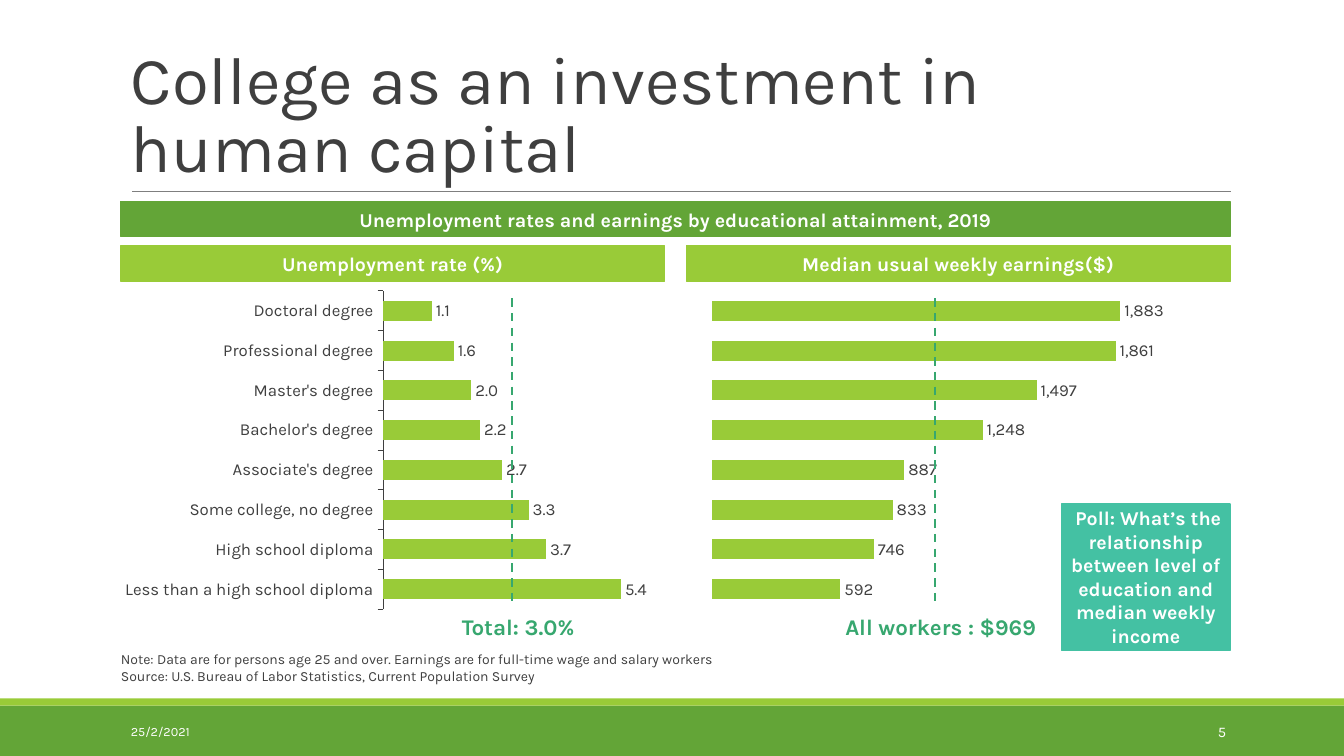
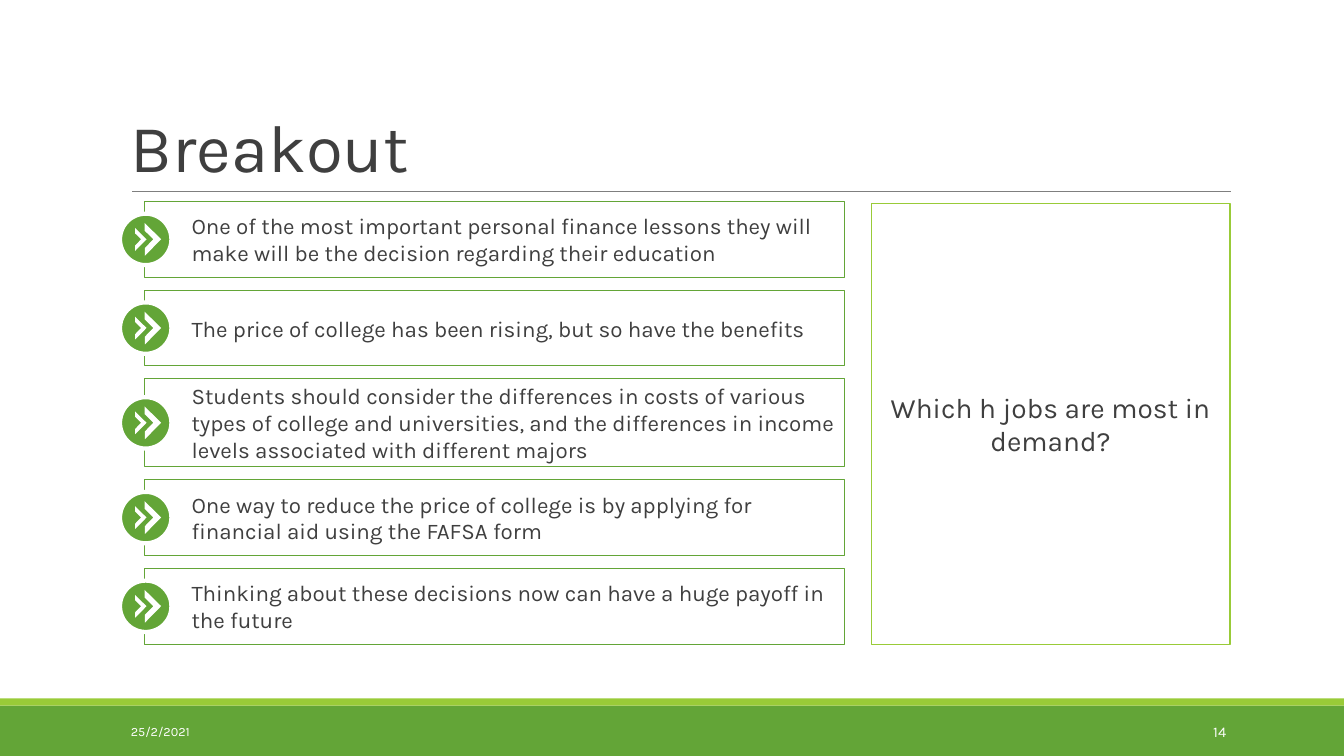
from dataclasses import dataclass

from lxml import etree
from pptx import Presentation
from pptx import util as u
from pptx.chart import data as chart_data
from pptx.dml import color
from pptx.enum import chart as charts
from pptx.enum import dml, shapes, text
from pptx.oxml import ns, parse_xml


@dataclass(frozen=True)
class Theme:
    font: str = "Karla"
    ink: str = "3F3F3F"
    rule: str = "7F7F7F"
    white: str = "FFFFFF"
    green: str = "63A537"
    lime: str = "99CB38"
    jade: str = "37A76F"
    teal: str = "44C1A3"
    title: float = 48
    question: float = 20
    body: float = 16
    heading: float = 14
    label: float = 12
    note: float = 10
    date: float = 9
    number: float = 10.5
    hairline: float = 0.75
    dash: float = 1.5
    ring: float = 3


THEME = Theme()
ALIGN = text.PP_ALIGN
ANCHOR = text.MSO_ANCHOR
KIND = shapes.MSO_SHAPE
PADDING = (0.1, 0.05, 0.1, 0.05)
FLUSH = (0, 0, 0, 0)
LEFT, WIDTH = 1.2, 11

DATE = "25/2/2021"
EARNINGS_TITLE = ["College as an investment in ", "human capital"]
EARNINGS_BANNER = "Unemployment rates and earnings by educational attainment, 2019"
DEGREES = [
    "Less than a high school diploma", "High school diploma",
    "Some college, no degree", "Associate's degree", "Bachelor's degree",
    "Master's degree", "Professional degree", "Doctoral degree",
]
PANELS = [
    {
        "heading": "Unemployment rate (%)", "average": "Total: 3.0%",
        "categories": DEGREES, "values": [5.4, 3.7, 3.3, 2.7, 2.2, 2, 1.6, 1.1],
        "format": "#,##0.0", "maximum": 6, "show_axis": True,
        "plot": (0.483, 0.005, 0.486, 0.954), "average_x": 5.08,
    },
    {
        "heading": "Median usual weekly earnings($)", "average": "All workers : $969",
        "categories": [str(n) for n in range(1, 9)],
        "values": [592, 746, 833, 887, 1248, 1497, 1861, 1883],
        "format": "#,##0", "maximum": 2000, "show_axis": False,
        "plot": (0.047, 0.005, 0.798, 0.954), "average_x": 9.27,
    },
]
NOTES = [
    "Note: Data are for persons age 25 and over. Earnings are for full-time wage and salary workers",
    "Source: U.S. Bureau of Labor Statistics, Current Population Survey",
]
POLL = " Poll: What’s the relationship between level of education and median weekly income"

BREAKOUT_TITLE = ["Breakout"]
LESSONS = [
    ("One of the most important personal finance lessons they will make "
     "will be the decision regarding their education", 0.75),
    ("The price of college has been rising, but so have the benefits", 0.75),
    ("Students should consider the differences in costs of various types of "
     "college and universities, and the differences in income levels "
     "associated with different majors", 0.87),
    ("One way to reduce the price of college is by applying for financial aid "
     "using the FAFSA form", 0.75),
    ("Thinking about these decisions now can have a huge payoff in the future", 0.75),
]
QUESTION = "Which h jobs are most in demand?"


def rgb(value):
    return color.RGBColor.from_string(value)


def style_font(font, size, ink, bold=False):
    font.name = THEME.font
    font.size = u.Pt(size)
    font.color.rgb = rgb(ink)
    font.bold = bold


def write(box, paragraphs, size, ink=THEME.ink, bold=False, align=ALIGN.LEFT,
          anchor=ANCHOR.MIDDLE, padding=PADDING):
    frame = box.text_frame
    frame.word_wrap = True
    frame.vertical_anchor = anchor
    (frame.margin_left, frame.margin_top,
     frame.margin_right, frame.margin_bottom) = map(u.Inches, padding)
    for index, content in enumerate(paragraphs):
        para = frame.add_paragraph() if index else frame.paragraphs[0]
        para.alignment = align
        lines = [content] if isinstance(content, str) else content
        for number, line in enumerate(lines):
            if number:
                para.add_line_break()
            span = para.add_run()
            span.text = line
            style_font(span.font, size, ink, bold)
    return frame


def add_text(page, place, paragraphs, size, **style):
    box = page.shapes.add_textbox(*map(u.Inches, place))
    return write(box, paragraphs, size, **style)


def add_box(parent, place, fill=None, line=None, weight=THEME.hairline, kind=KIND.RECTANGLE):
    box = parent.shapes.add_shape(kind, *map(u.Inches, place))
    box.shadow.inherit = False
    if fill:
        box.fill.solid()
        box.fill.fore_color.rgb = rgb(fill)
    else:
        box.fill.background()
    if line:
        box.line.color.rgb = rgb(line)
        box.line.width = u.Pt(weight)
    else:
        box.line.fill.background()
    return box


def add_line(page, start, end, ink, weight, dash=None):
    line = page.shapes.add_connector(
        shapes.MSO_CONNECTOR.STRAIGHT, *map(u.Inches, start + end))
    line.line.color.rgb = rgb(ink)
    line.line.width = u.Pt(weight)
    if dash:
        line.line.dash_style = dash
    etree.SubElement(line._element.spPr, ns.qn("a:effectLst"))


def add_heading(page, place, words, fill):
    box = add_box(page, place, fill, fill)
    write(box, [words], THEME.heading, ink=THEME.white, bold=True, align=ALIGN.CENTER)


def add_page(deck, title, number):
    page = deck.slides.add_slide(deck.slide_layouts[6])
    add_box(page, (0, 7, 13.33, 0.5), THEME.green)
    add_box(page, (0, 6.93, 13.33, 0.07), THEME.lime)
    add_line(page, (1.31, 1.9), (12.21, 1.9), THEME.rule, THEME.hairline)
    frame = add_text(page, (LEFT, 0.31, WIDTH, 1.59), [title], THEME.title,
                     anchor=ANCHOR.BOTTOM)
    frame.paragraphs[0].line_spacing = 0.85
    add_text(page, (LEFT, 7.06, 2.7, 0.4), [DATE], THEME.date, ink=THEME.white)
    add_text(page, (10.83, 7.06, 1.43, 0.4), [str(number)], THEME.number,
             ink=THEME.white, align=ALIGN.RIGHT)
    return page


def set_plot_layout(chart, plot):
    area = chart._chartSpace.chart.plotArea
    for old in area.findall(ns.qn("c:layout")):
        area.remove(old)
    sizes = "".join(f'<c:{name} val="{value}"/>' for name, value in zip("xywh", plot))
    area.insert(0, parse_xml(
        f'<c:layout {ns.nsdecls("c")}><c:manualLayout><c:layoutTarget val="inner"/>'
        f'<c:xMode val="edge"/><c:yMode val="edge"/>{sizes}</c:manualLayout></c:layout>'))


def add_bars(page, place, panel):
    data = chart_data.CategoryChartData(number_format=panel["format"])
    data.categories = panel["categories"]
    data.add_series("Series 1", panel["values"])
    chart = page.shapes.add_chart(
        charts.XL_CHART_TYPE.BAR_CLUSTERED, *map(u.Inches, place), data).chart
    style_font(chart.font, THEME.heading, THEME.ink)
    chart.has_legend = False
    chart.has_title = False
    set_plot_layout(chart, panel["plot"])

    values = chart.value_axis
    values.visible = False
    values.has_major_gridlines = False
    values.minimum_scale, values.maximum_scale = 0, panel["maximum"]

    degrees = chart.category_axis
    degrees.visible = panel["show_axis"]
    degrees.has_major_gridlines = False
    degrees.major_tick_mark = charts.XL_TICK_MARK.OUTSIDE
    degrees.format.line.color.rgb = rgb(THEME.ink)
    degrees.format.line.width = u.Pt(THEME.hairline)
    style_font(degrees.tick_labels.font, THEME.label, THEME.ink)

    plot = chart.plots[0]
    plot.gap_width = 100
    plot.vary_by_categories = False
    fill = plot.series[0].format.fill
    fill.solid()
    fill.fore_color.rgb = rgb(THEME.lime)
    plot.has_data_labels = True
    labels = plot.data_labels
    labels.show_value = True
    labels.position = charts.XL_LABEL_POSITION.OUTSIDE_END
    labels.number_format = panel["format"]
    labels.number_format_is_linked = False
    style_font(labels.font, THEME.label, THEME.ink)


def add_earnings_page(deck):
    page = add_page(deck, EARNINGS_TITLE, 5)
    add_heading(page, (LEFT, 2, WIDTH, 0.35), EARNINGS_BANNER, THEME.green)
    add_text(page, (LEFT, 6.45, WIDTH, 0.34), NOTES, THEME.note,
             anchor=ANCHOR.BOTTOM, padding=FLUSH)
    gap = 0.22
    width = (WIDTH - gap) / 2
    for index, panel in enumerate(PANELS):
        left = LEFT + index * (width + gap)
        add_heading(page, (left, 2.44, width, 0.35), panel["heading"], THEME.lime)
        add_bars(page, (left, 2.87, width, 3.31), panel)
        middle, label_width = panel["average_x"], 2.4
        add_text(page, (middle - label_width / 2, 6.08, label_width, 0.27),
                 [panel["average"]], THEME.body, ink=THEME.jade, bold=True,
                 align=ALIGN.CENTER, anchor=ANCHOR.TOP, padding=(0.12, 0, 0, 0))
        add_line(page, (middle, 2.96), (middle, 5.97), THEME.jade, THEME.dash,
                 dml.MSO_LINE.DASH)
    poll = add_box(page, (10.53, 5, 1.67, 1.45), THEME.teal, THEME.teal)
    write(poll, [POLL], THEME.heading, ink=THEME.white, bold=True, align=ALIGN.CENTER,
          anchor=ANCHOR.TOP, padding=(0.06, 0.02, 0.06, 0.02))


def add_arrow_badge(page, middle):
    badge = page.shapes.add_group_shape()
    size = 0.51
    add_box(badge, (1.19, middle - size / 2, size, size), THEME.green,
            THEME.white, THEME.ring, KIND.OVAL)
    for left, side in ((1.32, 0.23), (1.26, 0.16)):
        chevron = add_box(badge, (left, middle - side / 2, side, side), THEME.white,
                          kind=KIND.HALF_FRAME)
        chevron.adjustments[0] = 0.237
        chevron.adjustments[1] = 0.236
        chevron.rotation = 134.5


def add_breakout_page(deck):
    page = add_page(deck, BREAKOUT_TITLE, 14)
    top, gap = 2, 0.13
    for lesson, height in LESSONS:
        card = add_box(page, (1.43, top, 6.95, height), line=THEME.green)
        write(card, [lesson], THEME.body, padding=(0.47, 0.05, 0.1, 0.05))
        add_arrow_badge(page, top + height / 2)
        top += height + gap
    panel = add_box(page, (8.64, 2.02, 3.56, 4.37), line=THEME.lime)
    frame = write(panel, [QUESTION], THEME.question, align=ALIGN.CENTER)
    frame.paragraphs[0].space_after = u.Pt(8)


def main():
    deck = Presentation()
    deck.slide_width, deck.slide_height = u.Inches(13.33), u.Inches(7.5)
    add_earnings_page(deck)
    add_breakout_page(deck)
    deck.save("out.pptx")


if __name__ == "__main__":
    main()
